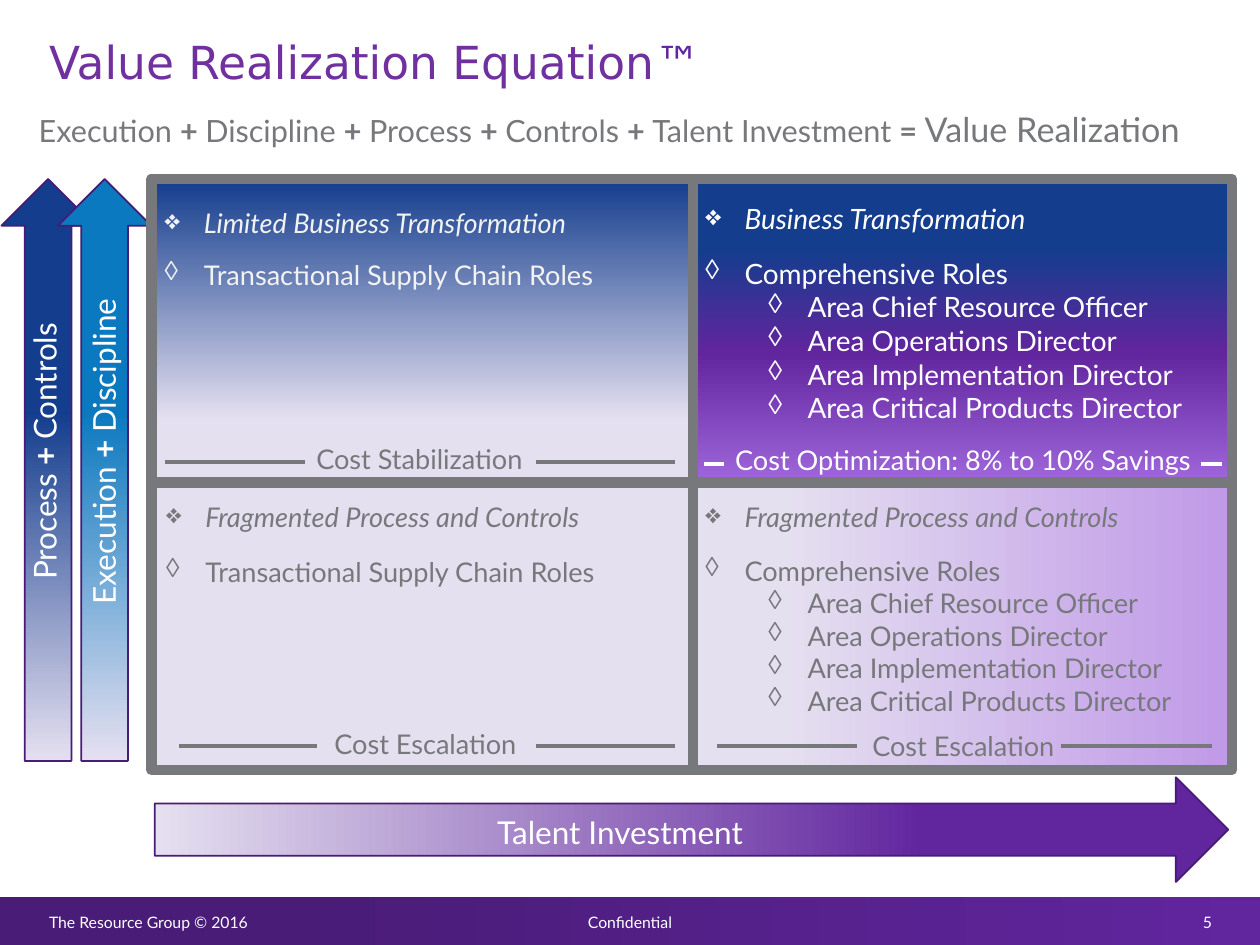
from dataclasses import dataclass
from typing import Any

from lxml.etree import SubElement
from pptx import Presentation
from pptx.dml.color import RGBColor
from pptx.enum.shapes import MSO_CONNECTOR as Connector, MSO_SHAPE as Shape
from pptx.enum.text import MSO_ANCHOR as Anchor, PP_ALIGN as Align
from pptx.oxml.ns import qn
from pptx.util import Cm, Pt

WHITE, GREY, PALE, OFF_WHITE = "FFFFFF", "77787B", "E5E0F0", "F2F2F2"
PURPLE, DARK_PURPLE, NAVY, BLUE = "61259E", "481B75", "143D8D", "0B79BF"
RIGHT, UP, LEFT, DOWN = 0, 90, 180, 270
FOOTER = {"size": 9, "insets": (0, 0.05, 0, 0), "anchor": Anchor.MIDDLE}


def color(value):
    return RGBColor.from_string(value)


def set_all(target, values):
    for name, value in values.items():
        setattr(target, name, value)


def terms(*words):
    """Runs for words joined by bold plus signs."""
    runs = []
    for word in words:
        runs += [("+ ", {"bold": True})] if runs else []
        runs.append((word + " " if word != words[-1] else word, {}))
    return runs


@dataclass
class SlideBuilder:
    page: Any
    font: str = "Lato"

    def outline(self, item, line_color, width):
        item.line.color.rgb = color(line_color)
        item.line.width = Pt(width)

    def shape(self, kind, area, stops=(), angle=RIGHT, line=None):
        item = self.page.shapes.add_shape(kind, *map(Cm, area))
        item.shadow.inherit = False
        if stops:
            item.fill.gradient()
            item.fill.gradient_angle = angle
            stop_list = item.element.spPr.find(".//" + qn("a:gsLst"))
            stop_list.clear()
            for percent, value in stops:
                stop = SubElement(stop_list, qn("a:gs"), pos=str(percent * 1000))
                SubElement(stop, qn("a:srgbClr"), val=value)
        else:
            item.fill.background()
        if line:
            self.outline(item, *line)
        else:
            item.line.fill.background()
        return item

    def rule(self, start, end, line_color=GREY, width=2.25):
        line = self.page.shapes.add_connector(
            Connector.STRAIGHT, *map(Cm, start + end))
        self.outline(line, line_color, width)
        SubElement(line.element.spPr, qn("a:effectLst"))

    def add_runs(self, para, runs, size, text_color, font=None):
        for text, changes in runs:
            span = para.add_run()
            span.text = text
            values = {"name": font or self.font, "size": Pt(size), "bold": False}
            set_all(span.font, {**values, **changes})
            span.font.color.rgb = color(text_color)

    def frame(self, box, insets=(0.25, 0.13, 0.25, 0.13), anchor=Anchor.TOP):
        sides = ("margin_left", "margin_top", "margin_right", "margin_bottom")
        set_all(box.text_frame, {"word_wrap": True, "vertical_anchor": anchor,
                                 **dict(zip(sides, map(Cm, insets)))})
        return box.text_frame

    def title(self, area, text, size, text_color):
        box = self.page.shapes.title
        set_all(box, dict(zip(("left", "top", "width", "height"), map(Cm, area))))
        para = self.frame(box, (0, 0, 0, 0)).paragraphs[0]
        set_all(para, {"alignment": Align.LEFT, "line_spacing": 0.95})
        self.add_runs(para, [(text, {}), ("™", {})], size, text_color, "DejaVu Sans")
        para.runs[1].font.color.rgb = color(PURPLE)

    def label(self, area, runs, size=18, text_color=WHITE, align=Align.CENTER,
              rotation=0, **frame_values):
        box = self.page.shapes.add_textbox(*map(Cm, area))
        box.rotation = rotation
        para = self.frame(box, **frame_values).paragraphs[0]
        para.alignment = align
        self.add_runs(para, runs, size, text_color)

    def bullet(self, para, mark, margin):
        props = para._p.get_or_add_pPr()
        props.set("marL", str(Cm(margin)))
        props.set("indent", str(-Cm(0.79)))
        SubElement(props, qn("a:buChar"), char=mark)

    def quadrant(self, area, heading, roles, summary, gaps, size=15.5,
                 text_color=GREY, summary_color=GREY):
        box = self.page.shapes.add_textbox(*map(Cm, area))
        text = self.frame(box)
        lines = [(heading, "❖", 0.79, 0), (roles[0], "◊", 0.79, gaps[0])]
        lines += [(role, "◊", 2.06, 0) for role in roles[1:]]
        for index, (words, mark, margin, gap) in enumerate(lines):
            para = text.add_paragraph() if index else text.paragraphs[0]
            self.bullet(para, mark, margin)
            para.space_before = Pt(gap)
            self.add_runs(para, [(words, {"italic": index == 0})], size, text_color)
        para = text.add_paragraph()
        set_all(para, {"alignment": Align.CENTER, "space_before": Pt(gaps[1])})
        self.add_runs(para, [(summary, {})], 15.5, summary_color)


def main():
    deck = Presentation()
    deck.slide_width, deck.slide_height = Cm(25.4), Cm(19.05)
    slide = SlideBuilder(deck.slides.add_slide(deck.slide_layouts[5]))

    # Title and equation
    slide.title((0.99, 0.76, 23.5, 2.72), "Value Realization Equation", 26, "7030A0")
    equation = terms("Execution", "Discipline", "Process", "Controls",
                     "Talent Investment ")
    equation += [("= ", {"bold": True}), ("Value Realization", {"size": Pt(19.5)})]
    slide.label((0.53, 2.06, 25.5, 1.09), equation, 17.5, GREY, Align.LEFT)

    # Quadrant backgrounds
    edge = (WHITE, 1)
    slide.shape(Shape.RECTANGLE, (13.87, 3.61, 11, 6.12),
                [(0, "A066DB"), (43, PURPLE), (77, NAVY)], UP, edge)
    slide.shape(Shape.RECTANGLE, (3.1, 9.73, 21.74, 5.79),
                [(58, PALE), (100, "C099E7")], RIGHT, edge)
    slide.shape(Shape.RECTANGLE, (3.07, 3.61, 10.87, 11.86),
                [(59, PALE), (100, NAVY)], UP, edge)

    # Axis arrows
    for left, text_left, shade, words in (
            (0.03, -2.49, NAVY, ("Process", "Controls")),
            (1.17, -1.3, BLUE, ("Execution", "Discipline"))):
        slide.shape(Shape.UP_ARROW, (left, 3.61, 1.88, 11.73),
                    [(40, shade), (100, PALE)], DOWN, (DARK_PURPLE, 1))
        slide.label((text_left, 8.59, 6.76, 1.02), terms(*words), rotation=270)
    slide.shape(Shape.RIGHT_ARROW, (3.12, 15.67, 21.64, 2.11),
                [(28, PURPLE), (100, PALE)], LEFT, (DARK_PURPLE, 1))
    slide.label((9.12, 16.26, 6.76, 1.02), [("Talent Investment", {})])

    # Quadrant texts
    basic = ["Transactional Supply Chain Roles"]
    full = ["Comprehensive Roles", "Area Chief Resource Officer",
            "Area Operations Director", "Area Implementation Director",
            "Area Critical Products Director"]
    fragmented = "Fragmented Process and Controls"
    slide.quadrant((3.07, 4.04, 10.77, 5.87), "Limited Business Transformation",
                   basic, "Cost Stabilization", (10.8, 86.4), text_color=OFF_WHITE)
    slide.quadrant((13.97, 3.94, 10.74, 5.94), "Business Transformation", full,
                   " Cost Optimization: 8% to 10% Savings", (12, 10.8), 16,
                   WHITE, WHITE)
    slide.quadrant((3.1, 9.96, 10.95, 6.22), fragmented, basic,
                   "Cost Escalation", (12.6, 79.8))
    slide.quadrant((13.97, 9.96, 10.9, 5.69), fragmented, full,
                   "Cost Escalation", (12, 7.2))

    # Grid
    slide.rule((3.12, 9.73), (24.77, 9.73), width=6)
    slide.rule((13.97, 3.61), (13.97, 15.54), width=6)
    slide.shape(Shape.RECTANGLE, (3.05, 3.61, 21.79, 11.91), line=(GREY, 6))

    # Rules beside the cost summaries
    for top, shade, spans in (
            (9.32, GREY, ((3.33, 6.15), (10.8, 13.61))),
            (9.35, WHITE, ((14.2, 14.6), (24.21, 24.64))),
            (15.04, GREY, ((3.61, 6.4), (10.8, 13.61), (14.45, 17.27),
                           (21.39, 24.43)))):
        for start, end in spans:
            slide.rule((start, top), (end, top), shade)

    # Footer
    slide.shape(Shape.RECTANGLE, (0, 18.08, 25.4, 0.97),
                [(22, "491C77"), (100, PURPLE)])
    for left, width, words, align in (
            (0.99, 8.08, "The Resource Group © 2016", Align.LEFT),
            (9.07, 7.26, "Confidential", Align.CENTER),
            (17.22, 7.21, "5", Align.RIGHT)):
        slide.label((left, 18.1, width, 0.95), [(words, {})], align=align, **FOOTER)

    deck.save("out.pptx")


if __name__ == "__main__":
    main()
